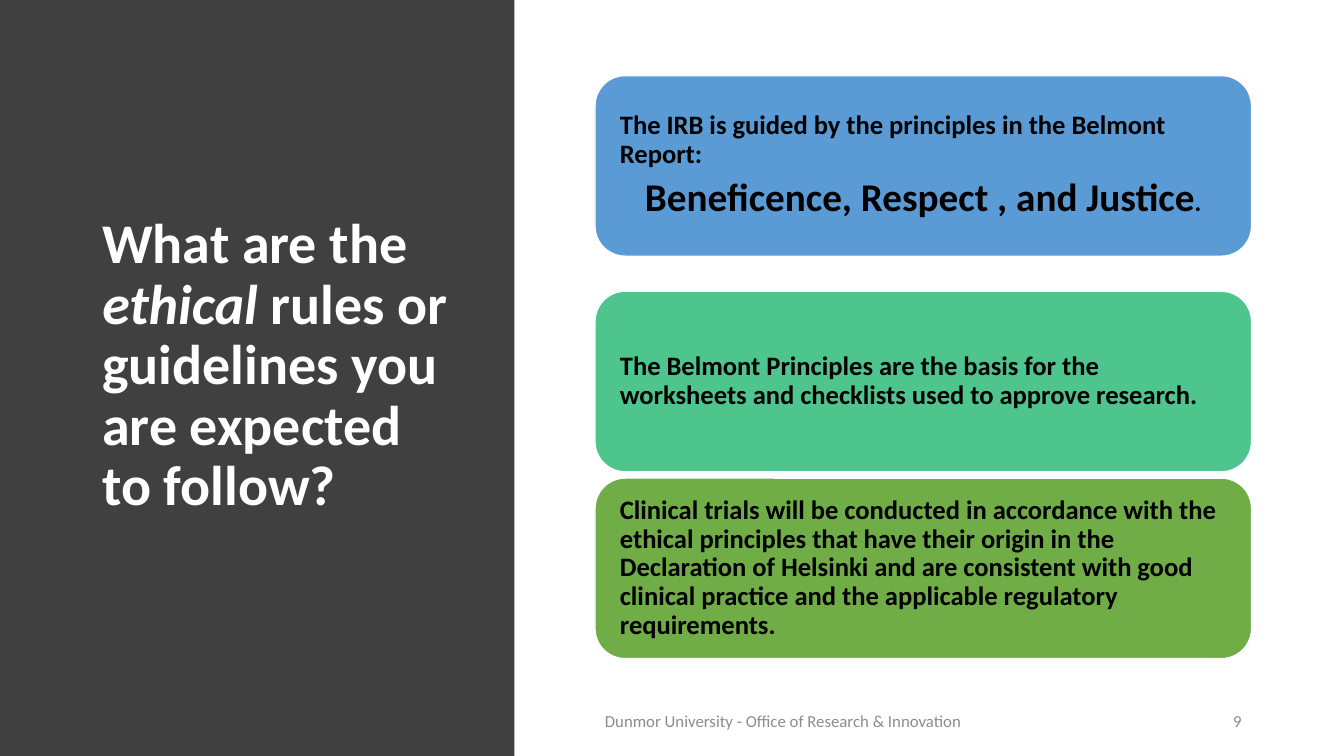
from pptx import Presentation
from pptx.dml.color import RGBColor
from pptx.enum.shapes import MSO_SHAPE
from pptx.enum.text import MSO_ANCHOR, PP_ALIGN
from pptx.util import Pt

RECTANGLE, ROUNDED = MSO_SHAPE.RECTANGLE, MSO_SHAPE.ROUNDED_RECTANGLE
MIDDLE = MSO_ANCHOR.MIDDLE
LEFT, CENTER, RIGHT = PP_ALIGN.LEFT, PP_ALIGN.CENTER, PP_ALIGN.RIGHT

COLORS = {
    "panel": "404040",
    "white": "FFFFFF",
    "black": "000000",
    "footer": "8C8C8C",
    "blue": "5B9BD5",
    "teal": "4DC58D",
    "green": "70AD47",
}


class SlideBuilder:
    """Holds the text style and the current slide."""

    font = "Calibri"

    def __init__(self, slide):
        self.slide = slide

    def color(self, name):
        return RGBColor.from_string(COLORS[name])

    def shape(self, kind, left, top, width, height, fill, line=None):
        shape = self.slide.shapes.add_shape(kind, Pt(left), Pt(top), Pt(width), Pt(height))
        shape.shadow.inherit = False
        shape.fill.solid()
        shape.fill.fore_color.rgb = self.color(fill)
        if line:
            shape.line.color.rgb = self.color(line)
            shape.line.width = Pt(1)
        else:
            shape.line.fill.background()
        return shape

    def paragraph(self, para, spans, color, align=LEFT, spacing=1.0, after=0):
        """Each span is (text, size, bold, italic)."""
        para.alignment = align
        para.line_spacing = spacing
        para.space_after = Pt(after)
        for text, size, bold, italic in spans:
            span = para.add_run()
            span.text = text
            span.font.name = self.font
            span.font.size = Pt(size)
            span.font.bold = bold
            span.font.italic = italic
            span.font.color.rgb = self.color(color)

    def text(self, left, top, width, height, spans, color, **layout):
        box = self.slide.shapes.add_textbox(Pt(left), Pt(top), Pt(width), Pt(height))
        frame = box.text_frame
        frame.word_wrap = True
        frame.vertical_anchor = MIDDLE
        self.paragraph(frame.paragraphs[0], spans, color, **layout)

    def card(self, left, top, width, height, fill, paragraphs):
        """Each paragraph is (alignment, spans)."""
        frame = self.shape(ROUNDED, left, top, width, height, fill, "white").text_frame
        frame.word_wrap = True
        frame.vertical_anchor = MIDDLE
        frame.margin_left = frame.margin_right = Pt(11.5)
        frame.margin_top = frame.margin_bottom = Pt(6)
        for index, (align, spans) in enumerate(paragraphs):
            para = frame.add_paragraph() if index else frame.paragraphs[0]
            self.paragraph(para, spans, "black", align=align, spacing=0.9, after=6.65)


def bold(text, size=19):
    return (text, size, True, False)


def main():
    deck = Presentation()
    deck.slide_width, deck.slide_height = Pt(960), Pt(540)
    page = SlideBuilder(deck.slides.add_slide(deck.slide_layouts[6]))

    # Dark panel with the title
    page.shape(RECTANGLE, 0, 0, 367.5, 540, "panel")
    title = [
        bold("What are the ", 40),
        ("ethical", 40, True, True),
        bold(" rules or guidelines you are expected to follow?", 40),
    ]
    page.text(66, 49, 264, 426, title, "white", spacing=0.9)

    # Guideline cards
    column, width = 425, 469
    cards = [
        (54, "blue", [
            (LEFT, [bold("The IRB is guided by the principles in the Belmont Report:")]),
            (CENTER, [bold("Beneficence, Respect , and Justice", 28), bold(".")]),
        ]),
        (208, "teal", [
            (LEFT, [bold("The Belmont Principles are the basis for the worksheets "
                         "and checklists used to approve research.")]),
        ]),
        (341.5, "green", [
            (LEFT, [bold("Clinical trials will be conducted in accordance with the ethical "
                         "principles that have their origin in the Declaration of Helsinki "
                         "and are consistent with good clinical practice and the applicable "
                         "regulatory requirements.")]),
        ]),
    ]
    for top, fill, paragraphs in cards:
        page.card(column, top, width, 129, fill, paragraphs)

    # Footer and slide number
    footer = "Dunmor University - Office of Research & Innovation"
    page.text(column, 500.5, 353, 29, [(footer, 12, False, False)], "footer", after=6)
    page.text(798, 500.5, 96, 29, [("9", 12, False, False)], "footer", align=RIGHT, after=6)

    deck.save("out.pptx")


if __name__ == "__main__":
    main()
